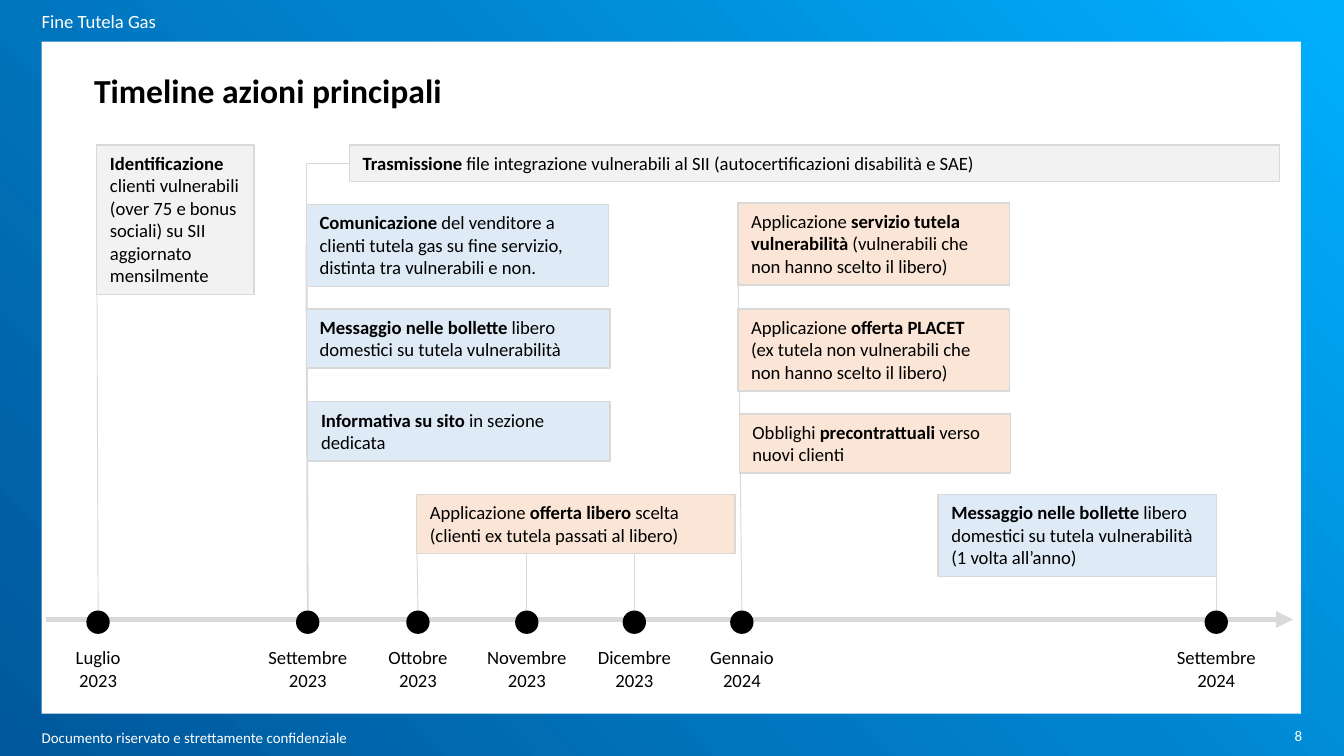
from copy import deepcopy

from lxml import etree
from pptx import Presentation
from pptx.dml.color import RGBColor
from pptx.enum.shapes import MSO_CONNECTOR, MSO_SHAPE
from pptx.enum.text import MSO_ANCHOR, MSO_AUTO_SIZE, PP_ALIGN
from pptx.oxml.ns import qn
from pptx.util import Inches, Pt

# Grid: 100 columns by 56.25 rows, each a tenth of an inch
UNIT = Inches(0.1)
COLS, ROWS = 100, 56.25

FONT = "Calibri"
BLACK = RGBColor(0x00, 0x00, 0x00)
WHITE = RGBColor(0xFF, 0xFF, 0xFF)
EDGE = RGBColor(0xD9, 0xD9, 0xD9)
GREY = RGBColor(0xF2, 0xF2, 0xF2)
BLUE = RGBColor(0xDE, 0xEB, 0xF7)
PEACH = RGBColor(0xFB, 0xE5, 0xD6)
DEEP = RGBColor(0x01, 0x57, 0x9B)
MID = RGBColor(0x00, 0x82, 0xCC)
SKY = RGBColor(0x00, 0xB0, 0xFF)

RECT, OVAL = MSO_SHAPE.RECTANGLE, MSO_SHAPE.OVAL
STRAIGHT, ELBOW = MSO_CONNECTOR.STRAIGHT, MSO_CONNECTOR.ELBOW
LEFT, CENTER, RIGHT = PP_ALIGN.LEFT, PP_ALIGN.CENTER, PP_ALIGN.RIGHT
TOP, MIDDLE = MSO_ANCHOR.TOP, MSO_ANCHOR.MIDDLE
FIXED, GROW = MSO_AUTO_SIZE.NONE, MSO_AUTO_SIZE.SHAPE_TO_FIT_TEXT
NORTH, WEST, EAST = 0, 1, 3
AXIS, DOT = 46.1, 1.6


def grid(*cells):
    return [round(cell * UNIT) for cell in cells]


class Board:
    """Style and drawing methods for one slide."""

    def __init__(self, slide):
        self.slide = slide
        self.shapes = slide.shapes
        self.panel = None

    def backdrop(self):
        fill = self.slide.background.fill
        fill.gradient()
        fill.gradient_angle = 45
        first = fill.gradient_stops[0]._gs
        first.addnext(deepcopy(first))
        for stop, (place, color) in zip(
                fill.gradient_stops, ((0, DEEP), (0.53, MID), (1, SKY))):
            stop.position = place
            stop.color.rgb = color
        self.panel = self.shape(RECT, (3.1, 3.1, 93.7, 50), WHITE)
        self.shapes._spTree.insert(2, self.panel._element)

    def fill_text(self, frame, text, size=10, color=BLACK, align=LEFT,
                  anchor=TOP, inset=True, fit=GROW):
        """Fill a frame; words between asterisks are bold."""
        frame.word_wrap = True
        frame.auto_size = fit
        frame.vertical_anchor = anchor
        if not inset:
            frame.margin_left = frame.margin_right = 0
            frame.margin_top = frame.margin_bottom = 0
        for num, line in enumerate(text.split("\n")):
            para = frame.add_paragraph() if num else frame.paragraphs[0]
            para.alignment = align
            para.space_before = Pt(0)
            para.font.name, para.font.size = FONT, Pt(size)
            para.font.color.rgb = color
            for part, words in enumerate(line.split("*")):
                if words:
                    run = para.add_run()
                    run.text = words
                    run.font.bold = part % 2 == 1

    def holder(self, item, cells, text, **style):
        item.left, item.top, item.width, item.height = grid(*cells)
        self.fill_text(item.text_frame, text, fit=FIXED, **style)

    def label(self, cells, text, **style):
        box = self.shapes.add_textbox(*grid(*cells))
        self.fill_text(box.text_frame, text, **style)

    def shape(self, kind, cells, fill, edge=None, width=0.75):
        item = self.shapes.add_shape(kind, *grid(*cells))
        item.shadow.inherit = False
        item.fill.solid()
        item.fill.fore_color.rgb = fill
        if edge is None:
            item.line.fill.background()
        else:
            item.line.color.rgb = edge
            item.line.width = Pt(width)
        return item

    def card(self, cells, fill, text):
        item = self.shape(RECT, cells, fill, EDGE)
        self.fill_text(item.text_frame, text)
        return item

    def line(self, start, end, width=0.5, kind=STRAIGHT):
        item = self.shapes.add_connector(kind, *grid(*start, *end))
        item.line.color.rgb = EDGE
        item.line.width = Pt(width)
        etree.SubElement(item._element.spPr, qn("a:effectLst"))
        self.panel._element.addnext(item._element)
        return item

    def arrow(self, start, end):
        item = self.line(start, end, 3)
        etree.SubElement(item.line._get_or_add_ln(), qn("a:tailEnd"),
                         type="triangle")

    def elbow(self, start, end, bend):
        item = self.line(start, end, kind=ELBOW)
        geom = item._element.spPr.find(qn("a:prstGeom"))
        guides = geom.find(qn("a:avLst"))
        if guides is None:
            guides = etree.SubElement(geom, qn("a:avLst"))
        etree.SubElement(guides, qn("a:gd"), name="adj1", fmla=f"val {bend}")

    def event(self, col, date):
        """Dot on the axis with its date below."""
        self.label((col - 4.15, 47.6, 8.3, 4.4), date, align=CENTER)
        return self.shape(OVAL, (col - DOT / 2, 45.5, DOT, DOT),
                          BLACK, BLACK, 1)

    def join(self, dot, card, side, width=0.5):
        item = self.line((0, 0), (1, 1), width)
        item.begin_connect(dot, NORTH)
        item.end_connect(card, side)

    def drop(self, dot, col, row):
        item = self.line((col, AXIS), (col, row))
        item.begin_connect(dot, NORTH)


def main():
    deck = Presentation()
    deck.slide_width, deck.slide_height = grid(COLS, ROWS)
    slide = deck.slides.add_slide(deck.slide_layouts[8])
    title, photo, head = slide.placeholders
    photo._element.getparent().remove(photo._element)
    board = Board(slide)

    # Frame, header, title and footer
    board.backdrop()
    board.holder(head, (3.1, 0.8, 73.9, 1.8), "Fine Tutela Gas",
                 color=WHITE, anchor=MIDDLE, inset=False)
    head.text_frame.paragraphs[0].line_spacing = 0.9
    board.holder(title, (6, 4.7, 50.3, 4), "*Timeline azioni principali*",
                 size=18)
    small = dict(size=8, color=WHITE, anchor=MIDDLE, inset=False, fit=FIXED)
    board.label((3.1, 54.3, 31.9, 1.2),
                "Documento riservato e strettamente confidenziale", **small)
    board.label((77.5, 53.2, 19.4, 3), "8", align=RIGHT, **small)

    # Action cards
    check = board.card(
        (7.2, 10.8, 11.7, 11.1), GREY,
        "*Identificazione* clienti vulnerabili\n"
        "(over 75 e bonus sociali) su SII aggiornato mensilmente")
    board.card(
        (26, 10.8, 69.2, 2.7), GREY,
        "*Trasmissione *file integrazione vulnerabili al SII "
        "(autocertificazioni disabilità e SAE)")
    notice = board.card(
        (22.8, 15.2, 22.5, 6.1), BLUE,
        "*Comunicazione* del venditore a clienti tutela gas su fine "
        "servizio, distinta tra vulnerabili e non.")
    bill = "*Messaggio nelle bollette *libero domestici su tutela vulnerabilità"
    board.card((22.8, 23, 22.6, 4.4), BLUE, bill)
    board.card((22.9, 29.9, 22.5, 4.4), BLUE,
               "*Informativa su sito *in sezione dedicata")
    offer = board.card(
        (31, 36.8, 23.7, 4.4), PEACH,
        "Applicazione *offerta libero *scelta "
        "(clienti ex tutela passati al libero)")
    guard = board.card(
        (54.9, 15.1, 20.2, 6.1), PEACH,
        "Applicazione *servizio tutela vulnerabilità* "
        "(vulnerabili che non hanno scelto il libero)")
    board.card(
        (54.9, 23, 20.2, 6.1), PEACH,
        "Applicazione *offerta PLACET*\n"
        "(ex tutela non vulnerabili che non hanno scelto il libero)")
    board.card((55, 30.8, 20.2, 4.4), PEACH,
               "Obblighi *precontrattuali* verso nuovi clienti")
    yearly = board.card((69.8, 36.8, 20.7, 6.1), BLUE,
                        bill + "\n(1 volta all’anno)")

    # Axis, dates and the lines up to the cards
    board.arrow((3.4, AXIS), (96.2, AXIS))
    for col, date, card, side, width in (
            (7.3, "Luglio 2023", check, WEST, 0.5),
            (22.9, "Settembre 2023", notice, WEST, 1),
            (31.1, "Ottobre 2023", offer, WEST, 0.5),
            (55.2, "Gennaio 2024", guard, WEST, 0.5),
            (90.5, "Settembre 2024", yearly, EAST, 0.5)):
        board.join(board.event(col, date), card, side, width)
    for col, date in ((39.2, "Novembre 2023"), (47.2, "Dicembre 2023")):
        board.drop(board.event(col, date), col, 39.1)
    board.elbow((22.8, 18.2), (26, 12.2), 900)

    deck.save("out.pptx")


if __name__ == "__main__":
    main()
